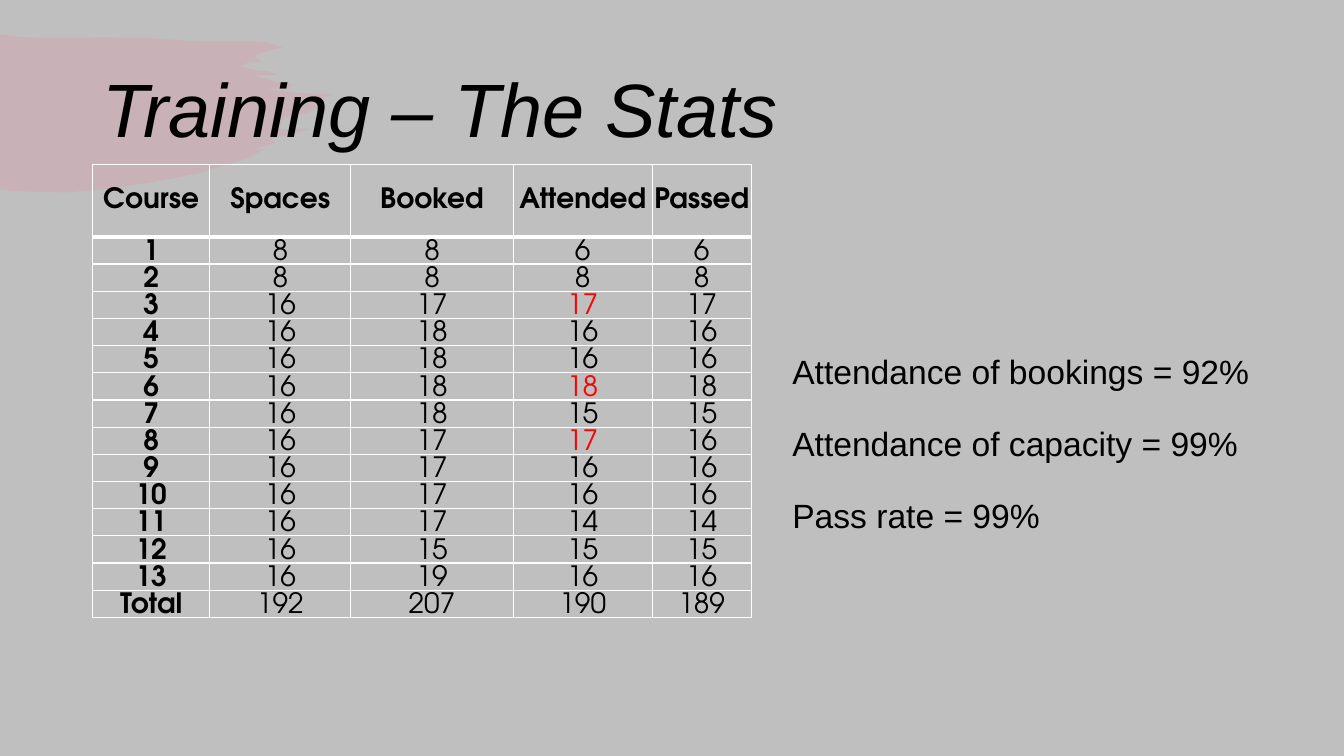
from pptx import Presentation
from pptx.dml.color import RGBColor
from pptx.enum.text import MSO_ANCHOR, PP_ALIGN
from pptx.oxml import parse_xml
from pptx.oxml.ns import nsdecls, qn
from pptx.util import Inches, Pt
from lxml.etree import SubElement

TITLE = "Training – The Stats"
HEADINGS = ["Course", "Spaces", "Booked", "Attended", "Passed"]
COURSES = [
    (8, 8, 6, 6), (8, 8, 8, 8), (16, 17, 17, 17), (16, 18, 16, 16),
    (16, 18, 16, 16), (16, 18, 18, 18), (16, 18, 15, 15), (16, 17, 17, 16),
    (16, 17, 16, 16), (16, 17, 16, 16), (16, 17, 14, 14), (16, 15, 15, 15),
    (16, 19, 16, 16),
]
SUMMARY = ["Attendance of bookings = 92%", "Attendance of capacity = 99%", "Pass rate = 99%"]
COLUMN_WIDTHS = [1.16, 1.4, 1.61, 1.38, 0.98]
HEADER_HEIGHT, ROW_HEIGHT = 0.72, 0.27
BRUSH_OUTLINE = [
    (0, 0.34), (0.06, 0.35), (0.25, 0.37), (0.66, 0.38), (1.02, 0.37), (1.51, 0.38),
    (1.94, 0.41), (2.48, 0.41), (2.65, 0.42), (2.8, 0.47), (2.71, 0.49), (2.55, 0.54),
    (2.53, 0.57), (2.56, 0.59), (2.62, 0.62), (2.46, 0.62), (2.38, 0.66), (2.46, 0.68),
    (2.56, 0.7), (2.66, 0.71), (2.75, 0.74), (2.51, 0.75), (2.63, 0.78), (2.73, 0.81),
    (2.8, 0.82), (2.88, 0.83), (2.9, 0.85), (2.87, 0.88), (2.84, 0.88), (2.63, 0.88),
    (2.95, 0.92), (3.3, 0.94), (3.21, 0.97), (3.22, 1.03), (3.18, 1.06), (3.07, 1.11),
    (3, 1.13), (2.83, 1.16), (2.8, 1.2), (2.78, 1.25), (2.74, 1.28), (3.08, 1.28),
    (2.88, 1.33), (2.69, 1.38), (2.73, 1.42), (2.52, 1.48), (2.63, 1.48), (2.4, 1.59),
    (1.97, 1.72), (1.5, 1.81), (1.02, 1.88), (0.65, 1.91), (0.23, 1.9), (0.07, 1.89),
    (0, 1.88),
]


def color(hex_string):
    """Turn a hex string into a colour."""
    return RGBColor.from_string(hex_string)


def style(paragraph, font_name, size, hex_string="000000", bold=False, italic=False):
    """Format every run of a paragraph."""
    for run in paragraph.runs:
        font = run.font
        font.name, font.size, font.bold, font.italic = font_name, Pt(size), bold, italic
        font.color.rgb = color(hex_string)


def add_text(slide, box, lines, size, anchor, space_before=0, bottom=0.05, italic=False):
    """Add a text box with one paragraph for each line."""
    frame = slide.shapes.add_textbox(*map(Inches, box)).text_frame
    frame.word_wrap = True
    frame.vertical_anchor = anchor
    frame.margin_bottom = Inches(bottom)
    frame.text = "\n".join(lines)
    for index, paragraph in enumerate(frame.paragraphs):
        paragraph.line_spacing = 0.9
        paragraph.space_before = Pt(space_before if index else 0)
        style(paragraph, "Arial", size, italic=italic)


def add_brush(slide):
    """Draw the translucent brush stroke behind the title."""
    points = [(Inches(x), Inches(y)) for x, y in BRUSH_OUTLINE]
    builder = slide.shapes.build_freeform(*points[0])
    builder.add_line_segments(points[1:], close=True)
    brush = builder.convert_to_shape()
    brush.shadow.inherit = False
    brush.line.fill.background()
    brush.fill.solid()
    brush.fill.fore_color.rgb = color("F07C98")
    tint = brush.fill._xPr.find(qn("a:solidFill"))[0]
    SubElement(tint, qn("a:alpha"), val="20000")


def set_borders(cell, widths):
    """Give a cell white borders, with widths in points for each side."""
    properties = cell._tc.get_or_add_tcPr()
    for index, (side, width) in enumerate(widths.items()):
        properties.insert(index, parse_xml(
            f'<a:ln{side} {nsdecls("a")} w="{Pt(width)}"><a:solidFill>'
            f'<a:srgbClr val="FFFFFF"/></a:solidFill></a:ln{side}>'))


def add_stats_table(slide):
    """Add the table of courses, with over-full courses in red."""
    totals = [sum(column) for column in zip(*COURSES)]
    body = [(number, *course) for number, course in enumerate(COURSES, 1)]
    rows = [HEADINGS, *body, ("Total", *totals)]
    height = HEADER_HEIGHT + ROW_HEIGHT * (len(rows) - 1)
    box = (0.92, 1.63, sum(COLUMN_WIDTHS), height)
    table = slide.shapes.add_table(len(rows), len(HEADINGS), *map(Inches, box)).table
    for column, width in zip(table.columns, COLUMN_WIDTHS):
        column.width = Inches(width)
    for row_index, values in enumerate(rows):
        is_header = row_index == 0
        table.rows[row_index].height = Inches(HEADER_HEIGHT if is_header else ROW_HEIGHT)
        for column_index, value in enumerate(values):
            cell = table.cell(row_index, column_index)
            cell.fill.background()
            cell.margin_left = cell.margin_right = cell.margin_top = Inches(0.01)
            cell.margin_bottom = 0
            cell.vertical_anchor = MSO_ANCHOR.MIDDLE if is_header else MSO_ANCHOR.BOTTOM
            cell.text = str(value)
            paragraph = cell.text_frame.paragraphs[0]
            paragraph.alignment = PP_ALIGN.CENTER
            paragraph.line_spacing = 1.0 if is_header else 0.75
            over_full = (HEADINGS[column_index] == "Attended" and values in body
                         and value > values[1])
            style(paragraph, "TeX Gyre Adventor", 20, "FF0000" if over_full else "000000",
                  bold=is_header or column_index == 0)
            set_borders(cell, {"L": 1, "R": 1, "T": 3 if row_index == 1 else 1,
                               "B": 3 if is_header else 1})


def main():
    """Build the slide and save it."""
    presentation = Presentation()
    presentation.slide_width, presentation.slide_height = Inches(13.33), Inches(7.5)
    slide = presentation.slides.add_slide(presentation.slide_layouts[6])
    slide.background.fill.solid()
    slide.background.fill.fore_color.rgb = color("BFBFBF")
    add_brush(slide)
    add_text(slide, (0.92, 0.4, 11.5, 1.45), [TITLE], 54, MSO_ANCHOR.MIDDLE, italic=True)
    add_stats_table(slide)
    add_text(slide, (7.76, 3.08, 5.45, 2.64), SUMMARY, 24, MSO_ANCHOR.BOTTOM,
             space_before=25.5, bottom=0.41)
    presentation.save("out.pptx")


if __name__ == "__main__":
    main()
